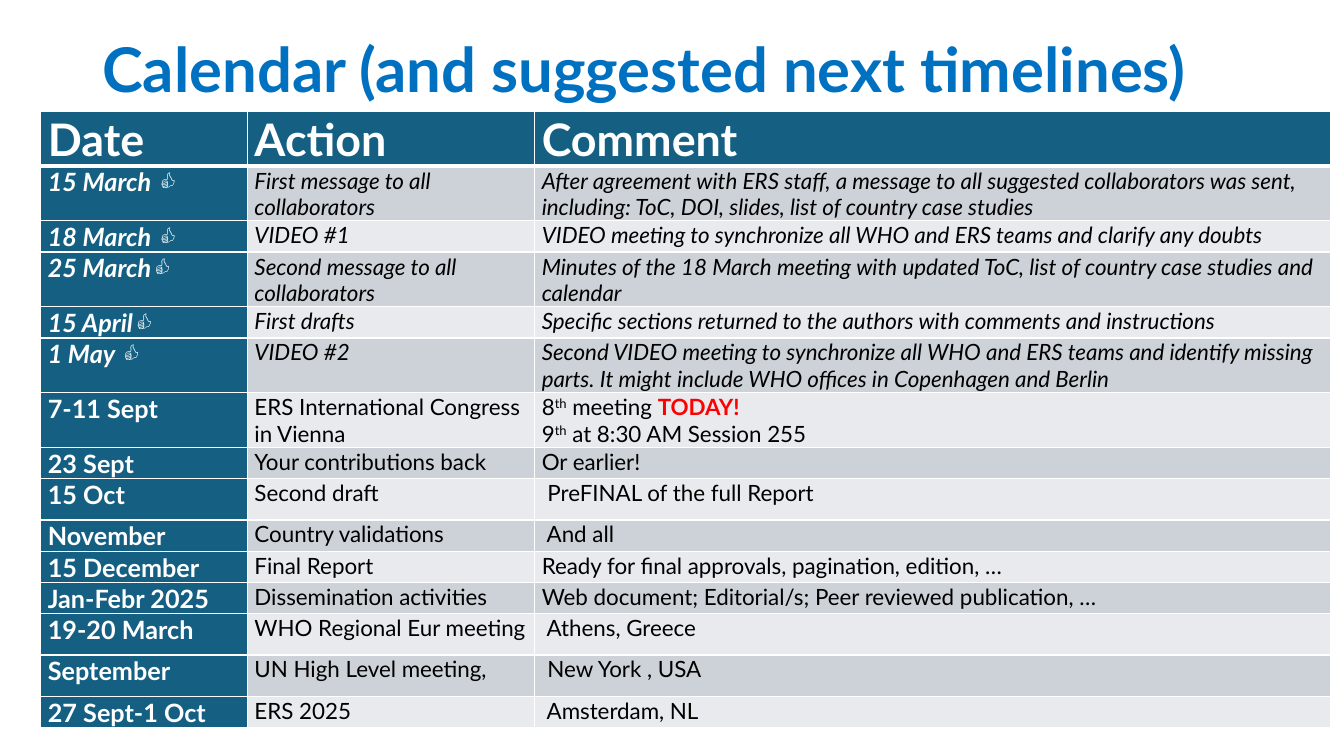
import pptx
import pptx.util
import pptx.dml.color
import pptx.enum.text
import pptx.oxml
import pptx.oxml.ns

Pt = pptx.util.Pt
FONT = "Lato"
COLORS = {
    "title": "0070C0",
    "header": "156082",
    "odd": "CCD2D8",
    "even": "E8EAED",
    "white": "FFFFFF",
    "text": "000000",
    "alert": "FF0000",
}
COLUMN_WIDTHS = [147.6, 205.2, 568.8]
ROW_HEIGHTS = {"header": 39, "double": 39, "single": 22, "tall": 29.5}
HEADINGS = ["Date", "Action", "Comment"]

# A comment is a string, or a list of paragraphs made of (words, style) spans.
DONE = [
    ("double", "15 March 👍", "First message to all collaborators",
     "After agreement with ERS staff, a message to all suggested collaborators was sent, "
     "including: ToC, DOI, slides, list of country case studies"),
    ("single", "18 March 👍", "VIDEO #1",
     "VIDEO meeting to synchronize all WHO and ERS teams and clarify any doubts"),
    ("double", "25 March👍", "Second message to all collaborators",
     "Minutes of the 18 March meeting with updated ToC, list of country case studies and calendar"),
    ("single", "15 April👍", "First drafts",
     "Specific sections returned to the authors with comments and instructions"),
    ("double", "1 May 👍", "VIDEO #2",
     "Second VIDEO meeting to synchronize all WHO and ERS teams and identify missing parts. "
     "It might include WHO offices in Copenhagen and Berlin"),
]
PLANNED = [
    ("double", "7-11 Sept", "ERS International Congress in Vienna",
     [[("8", {}), ("th", {"raised": True}), (" meeting ", {}),
       ("TODAY!", {"color": "alert", "bold": True})],
      [("9", {}), ("th", {"raised": True}), (" at 8:30 AM Session 255", {})]]),
    ("single", "23 Sept", "Your contributions back", "Or earlier!"),
    ("tall", "15 Oct", "Second draft", " PreFINAL of the full Report"),
    ("single", "November", "Country validations", " And all"),
    ("single", "15 December", "Final Report", "Ready for final approvals, pagination, edition, …"),
    ("single", "Jan-Febr 2025", "Dissemination activities",
     "Web document; Editorial/s; Peer reviewed publication, …"),
    ("tall", "19-20 March", "WHO Regional Eur meeting", " Athens, Greece"),
    ("tall", "September", "UN High Level meeting,", " New York , USA"),
    ("single", "27 Sept-1 Oct", "ERS 2025", " Amsterdam, NL"),
]


def rgb(name):
    return pptx.dml.color.RGBColor.from_string(COLORS[name])


def add_span(para, words, size, color="text", bold=False, italic=False, raised=False):
    span = para.add_run()
    span.text = words
    span.font.name = FONT
    span.font.size = Pt(size)
    span.font.color.rgb = rgb(color)
    span.font.bold = bold
    span.font.italic = italic
    if raised:
        span.font._element.set("baseline", "30000")


def set_borders(cell, top, bottom):
    """Draw white lines round a cell; they must come before its fill in the XML."""
    properties = cell._tc.get_or_add_tcPr()
    widths = {"lnL": 1, "lnR": 1, "lnT": top, "lnB": bottom}
    for index, (side, width) in enumerate(widths.items()):
        line = pptx.oxml.parse_xml(
            f'<a:{side} {pptx.oxml.ns.nsdecls("a")} w="{Pt(width)}"><a:solidFill>'
            f'<a:srgbClr val="{COLORS["white"]}"/></a:solidFill></a:{side}>')
        properties.insert(index, line)


def fill_cell(cell, content, fill, top=1, bottom=1, **style):
    cell.margin_left = cell.margin_right = Pt(5.2)
    cell.margin_top, cell.margin_bottom = Pt(0.7), Pt(0)
    cell.fill.solid()
    cell.fill.fore_color.rgb = rgb(fill)
    set_borders(cell, top, bottom)
    paragraphs = [[(content, {})]] if isinstance(content, str) else content
    for index, spans in enumerate(paragraphs):
        frame = cell.text_frame
        para = frame.add_paragraph() if index else frame.paragraphs[0]
        for words, changes in spans:
            add_span(para, words, **{**style, **changes})


def add_title(page, words):
    box = page.shapes.add_textbox(Pt(66), Pt(10.8), Pt(828), Pt(81.4))
    frame = box.text_frame
    frame.word_wrap = True
    frame.vertical_anchor = pptx.enum.text.MSO_ANCHOR.MIDDLE
    para = frame.paragraphs[0]
    para.line_spacing = 0.9
    add_span(para, words, 44, "title", bold=True)


def add_calendar(page):
    entries = DONE + PLANNED
    heights = [ROW_HEIGHTS[kind] for kind in ["header"] + [entry[0] for entry in entries]]
    table = page.shapes.add_table(
        len(heights), len(HEADINGS), Pt(29), Pt(79.5),
        Pt(sum(COLUMN_WIDTHS)), Pt(sum(heights))).table
    for column, width in zip(table.columns, COLUMN_WIDTHS):
        column.width = Pt(width)
    for row, height in zip(table.rows, heights):
        row.height = Pt(height)

    for column, heading in enumerate(HEADINGS):
        fill_cell(table.cell(0, column), heading, "header", bottom=3,
                  size=32, color="white", bold=True)
    for row, (_, date, action, comment) in enumerate(entries, start=1):
        italic = row <= len(DONE)
        band = "odd" if row % 2 else "even"
        top = 3 if row == 1 else 1
        fill_cell(table.cell(row, 0), date, "header", top,
                  size=18, color="white", bold=True, italic=italic)
        for column, content in enumerate([action, comment], start=1):
            fill_cell(table.cell(row, column), content, band, top, size=16, italic=italic)


def main():
    deck = pptx.Presentation()
    deck.slide_width, deck.slide_height = Pt(960), Pt(540)
    page = deck.slides.add_slide(deck.slide_layouts[6])
    add_title(page, "Calendar (and suggested next timelines)")
    add_calendar(page)
    deck.save("out.pptx")


if __name__ == "__main__":
    main()
